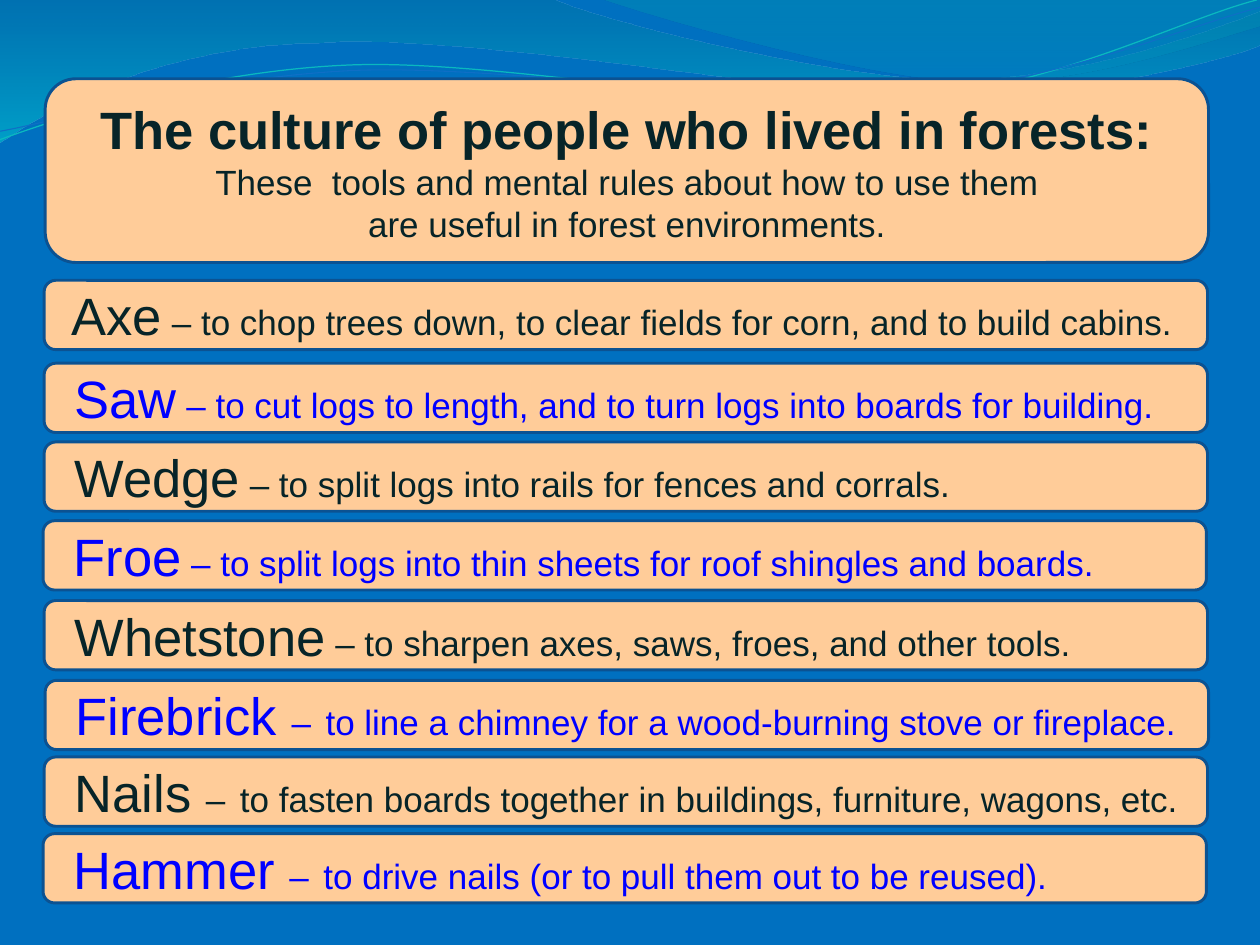
from copy import deepcopy
from dataclasses import dataclass

from lxml import etree
from pptx import Presentation
from pptx.dml.color import RGBColor
from pptx.enum.shapes import MSO_SHAPE
from pptx.enum.text import MSO_ANCHOR, MSO_AUTO_SIZE, PP_ALIGN
from pptx.oxml.ns import qn
from pptx.shapes.autoshape import Shape
from pptx.slide import Slide
from pptx.text.text import TextFrame, _Paragraph
from pptx.util import Inches, Pt

CALLOUT = MSO_SHAPE.ROUNDED_RECTANGULAR_CALLOUT
MIDDLE = MSO_ANCHOR.MIDDLE
NO_AUTOFIT = MSO_AUTO_SIZE.NONE
CENTER, LEFT = PP_ALIGN.CENTER, PP_ALIGN.LEFT

Point = tuple[float, float]
Segment = tuple[Point, ...]


@dataclass(frozen=True)
class Theme:
    font: str = "Arial"
    large: int = 36
    small: int = 24
    background: str = "0070C0"
    panel: str = "FFCC99"
    border: str = "0B5292"
    border_width: float = 2
    dark: str = "072428"
    blue: str = "0000FF"


@dataclass(frozen=True)
class GradientStop:
    position: float
    color: str
    opacity: int


@dataclass(frozen=True)
class Wave:
    start: Point
    segments: tuple[Segment, ...]
    stops: tuple[GradientStop, ...] = ()
    line: str = ""
    width: float = 0


@dataclass(frozen=True)
class Panel:
    left: float
    top: float
    height: float = 0.66
    width: float = 11.08


@dataclass(frozen=True)
class Tool:
    panel: Panel
    name: str
    use: str
    wide_dash: bool = False


THEME = Theme()
TITLE_PANEL = Panel(0.43, 0.75, 1.75)
CALLOUT_ADJUSTMENTS = (-0.213, 0.5, 0.167)

HEADING = "The culture of people who lived in forests:"
SUBHEADING = "These  tools and mental rules about how to use them\vare useful in forest environments."

WAVES = (
    Wave((0, 0), (
        ((5.28, 0),),
        ((5.71, 0.2), (7.96, 0.76), (9.1, 0.76)),
        ((10.24, 0.76), (11.5, 0.31), (12, 0.11)),
        ((12, 0.43),),
        ((11.8, 0.53), (10.44, 0.91), (8.95, 0.91)),
        ((7.46, 0.9), (4.58, 0.33), (3.09, 0.41)),
        ((1.55, 0.43), (0.55, 0.99), (0, 1.36)),
    ), stops=(GradientStop(0, "0074A1", 45), GradientStop(1, "00C6CF", 55))),
    Wave((5.75, 0), (
        ((6.11, 0.13), (8.18, 0.74), (9.22, 0.78)),
        ((10.27, 0.83), (11.54, 0.38), (12, 0.25)),
        ((12, 0),),
    ), stops=(GradientStop(0, "00A1A9", 30), GradientStop(0.8, "008BBF", 45))),
    Wave((0, 1.33), (
        ((0.58, 1.12), (1.89, 0.68), (3.32, 0.62)),
        ((4.74, 0.56), (7.11, 1.06), (8.55, 0.96)),
        ((10, 0.85), (11.26, 0.18), (11.97, 0)),
    ), line="0AB8BF", width=0.85),
    Wave((0, 1.25), (
        ((0.57, 1.15), (1.96, 0.73), (3.4, 0.67)),
        ((4.83, 0.62), (7.17, 1), (8.6, 0.9)),
        ((10.04, 0.8), (11.29, 0.25), (12, 0.07)),
    ), line="0F6FC6", width=0.75),
)

TOOLS = (
    Tool(Panel(0.42, 2.67), "Axe", "to chop trees down, to clear fields for corn, and to build cabins."),
    Tool(Panel(0.42, 3.46), "Saw", "to cut logs to length, and to turn logs into boards for building."),
    Tool(Panel(0.42, 4.21), "Wedge", "to split logs into rails for fences and corrals."),
    Tool(Panel(0.41, 4.96), "Froe", "to split logs into thin sheets for roof shingles and boards."),
    Tool(Panel(0.42, 5.72), "Whetstone", "to sharpen axes, saws, froes, and other tools."),
    Tool(Panel(0.43, 6.48), "Firebrick", "to line a chimney for a wood-burning stove or fireplace.", True),
    Tool(Panel(0.42, 7.21), "Nails", "to fasten boards together in buildings, furniture, wagons, etc.", True),
    Tool(Panel(0.41, 7.94), "Hammer", "to drive nails (or to pull them out to be reused).", True),
)


def rgb(color: str) -> RGBColor:
    return RGBColor.from_string(color)


def bend_segments(sp: Shape, segments: tuple[Segment, ...]) -> None:
    lines = iter(list(sp._element.spPr.iter(qn("a:lnTo"))))
    for segment in segments:
        first, *others = [next(lines) for _ in segment]
        if others:
            first.tag = qn("a:cubicBezTo")
            for other in others:
                first.append(other[0])
                other.getparent().remove(other)


def add_wave(s: Slide, wave: Wave) -> None:
    points = [wave.start, *(pt for segment in wave.segments for pt in segment)]
    emu = [(Inches(x), Inches(y)) for x, y in points]
    builder = s.shapes.build_freeform(*emu[0])
    builder.add_line_segments(emu[1:], close=False)
    sp = builder.convert_to_shape()
    bend_segments(sp, wave.segments)
    sp.shadow.inherit = False
    if not wave.stops:
        sp.fill.background()
        sp.line.color.rgb = rgb(wave.line)
        sp.line.width = Pt(wave.width)
        return
    etree.SubElement(next(sp._element.spPr.iter(qn("a:path"))), qn("a:close"))
    sp.line.fill.background()
    sp.fill.gradient()
    sp.fill.gradient_angle = 270
    for stop, spec in zip(sp.fill.gradient_stops, wave.stops):
        stop.position = spec.position
        stop.color.rgb = rgb(spec.color)
    colors = sp._element.spPr.iter(qn("a:srgbClr"))
    for color, spec in zip(colors, wave.stops):
        etree.SubElement(color, qn("a:alpha"), val=str(spec.opacity * 1000))


def add_panel(s: Slide, panel: Panel) -> Shape:
    sp = s.shapes.add_shape(CALLOUT, Inches(panel.left), Inches(panel.top),
                            Inches(panel.width), Inches(panel.height))
    for index, value in enumerate(CALLOUT_ADJUSTMENTS):
        sp.adjustments[index] = value
    sp.shadow.inherit = False
    sp.fill.solid()
    sp.fill.fore_color.rgb = rgb(THEME.panel)
    sp.line.color.rgb = rgb(THEME.border)
    sp.line.width = Pt(THEME.border_width)
    return sp


def set_frame(sp: Shape) -> TextFrame:
    tf = sp.text_frame
    tf.word_wrap = True
    tf.auto_size = NO_AUTOFIT
    tf.vertical_anchor = MIDDLE
    tf.margin_left = tf.margin_right = Inches(0.12)
    tf.margin_top = tf.margin_bottom = Inches(0.06)
    return tf


def format_runs(p: _Paragraph, sizes: list[int], color: str, bold: bool = False) -> None:
    for r, size in zip(p.runs, sizes):
        r.font.name = THEME.font
        r.font.size = Pt(size)
        r.font.bold = bold
        r.font.color.rgb = rgb(color)


def add_title(s: Slide) -> None:
    panel = add_panel(s, TITLE_PANEL)
    sp = s.shapes.title
    sp.left, sp.top, sp.width, sp.height = panel.left, panel.top, panel.width, panel.height
    tf = set_frame(sp)
    heading, subheading = tf.paragraphs[0], tf.add_paragraph()
    heading.text, subheading.text = HEADING, SUBHEADING
    heading.alignment = subheading.alignment = CENTER
    format_runs(heading, [THEME.large], THEME.dark, bold=True)
    format_runs(subheading, [THEME.small] * 2, THEME.dark)
    subheading._p.find(qn("a:br")).append(deepcopy(subheading.runs[0]._r.rPr))
    s.shapes._spTree.append(sp._element)


def add_tool(s: Slide, tool: Tool, color: str) -> None:
    p = set_frame(add_panel(s, tool.panel)).paragraphs[0]
    p.alignment = LEFT
    texts = [f" {tool.name}", f" – {tool.use}"]
    if tool.wide_dash:
        texts = [f" {tool.name} ", "–", " ", tool.use]
    for text in texts:
        p.add_run().text = text
    format_runs(p, [THEME.large, THEME.small] * 2, color)


def main() -> None:
    prs = Presentation()
    prs.slide_width, prs.slide_height = Inches(12), Inches(9)
    s = prs.slides.add_slide(prs.slide_layouts[5])
    s.background.fill.solid()
    s.background.fill.fore_color.rgb = rgb(THEME.background)
    for wave in WAVES:
        add_wave(s, wave)
    add_title(s)
    for index, tool in enumerate(TOOLS):
        add_tool(s, tool, THEME.blue if index % 2 else THEME.dark)
    prs.save("out.pptx")


if __name__ == "__main__":
    main()
